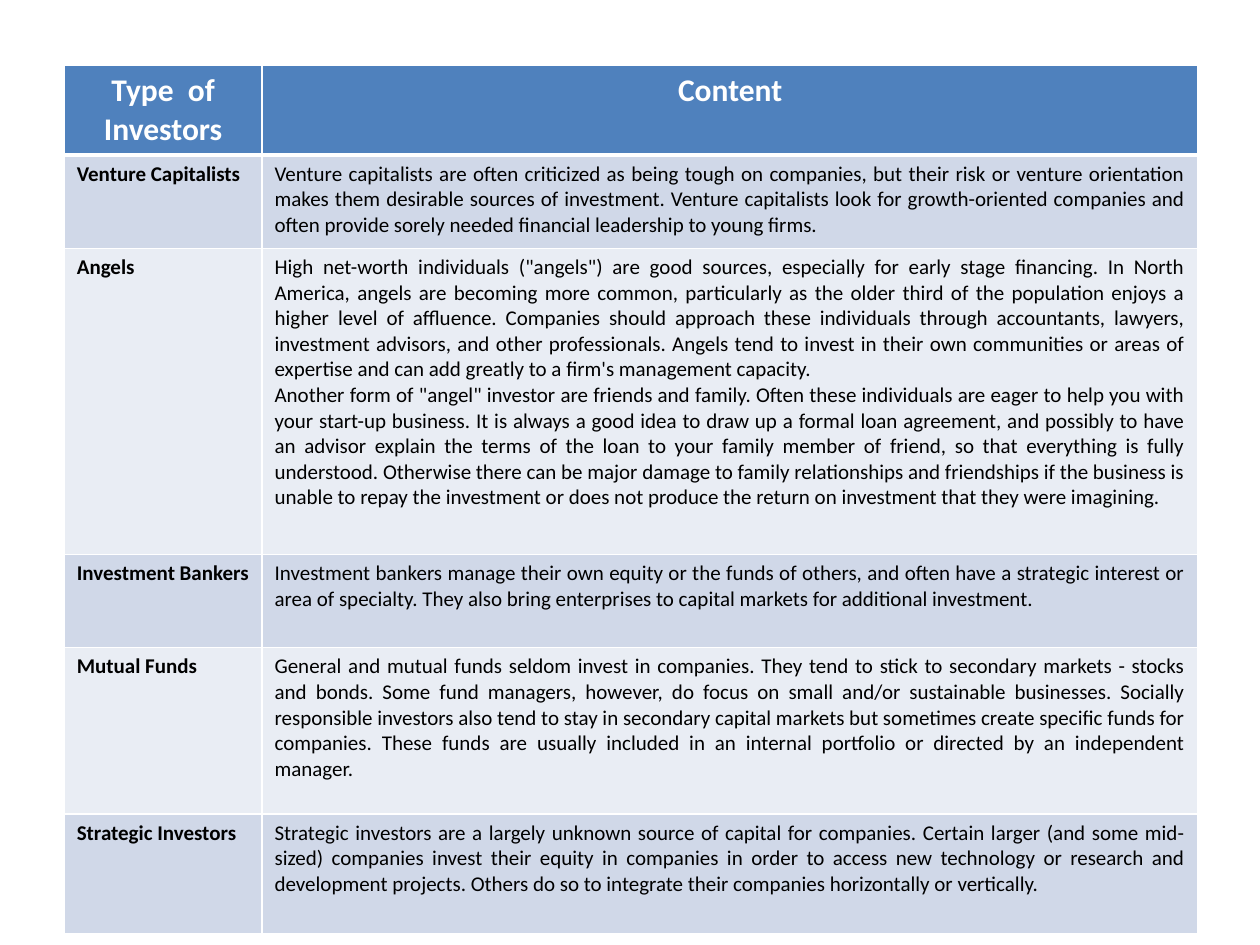
from lxml import etree
from pptx import Presentation
from pptx.dml.color import RGBColor
from pptx.enum import text
from pptx.oxml import ns
from pptx.util import Inches, Pt

WHITE = RGBColor(0xFF, 0xFF, 0xFF)
BLACK = RGBColor(0x00, 0x00, 0x00)
HEADER_BLUE = RGBColor(0x4F, 0x81, 0xBD)
BAND_DARK = RGBColor(0xD0, 0xD8, 0xE8)
BAND_LIGHT = RGBColor(0xE9, 0xED, 0xF4)

# Each row: height, investor type, paragraphs of content
ROWS = [
    (0.71, "Type  of Investors", ["Content"]),
    (0.74, "Venture Capitalists", [
        "Venture capitalists are often criticized as being tough on companies, but their risk "
        "or venture orientation makes them desirable sources of investment. Venture capitalists "
        "look for growth-oriented companies and often provide sorely needed financial "
        "leadership to young firms."]),
    (2.43, "Angels", [
        "High net-worth individuals (\"angels\") are good sources, especially for early stage "
        "financing. In North America, angels are becoming more common, particularly as the older "
        "third of the population enjoys a higher level of affluence. Companies should approach "
        "these individuals through accountants, lawyers, investment advisors, and other "
        "professionals. Angels tend to invest in their own communities or areas of expertise "
        "and can add greatly to a firm's management capacity.",
        "Another form of \"angel\" investor are friends and family. Often these individuals are "
        "eager to help you with your start-up business. It is always a good idea to draw up a "
        "formal loan agreement, and possibly to have an advisor explain the terms of the loan to "
        "your family member of friend, so that everything is fully understood. Otherwise there "
        "can be major damage to family relationships and friendships if the business is unable "
        "to repay the investment or does not produce the return on investment that they were "
        "imagining."]),
    (0.74, "Investment Bankers", [
        "Investment bankers manage their own equity or the funds of others, and often have a "
        "strategic interest or area of specialty. They also bring enterprises to capital markets "
        "for additional investment."]),
    (1.32, "Mutual Funds", [
        "General and mutual funds seldom invest in companies. They tend to stick to secondary "
        "markets - stocks and bonds. Some fund managers, however, do focus on small and/or "
        "sustainable businesses. Socially responsible investors also tend to stay in secondary "
        "capital markets but sometimes create specific funds for companies. These funds are "
        "usually included in an internal portfolio or directed by an independent manager."]),
    (0.95, "Strategic Investors", [
        "Strategic investors are a largely unknown source of capital for companies. Certain "
        "larger (and some mid-sized) companies invest their equity in companies in order to "
        "access new technology or research and development projects. Others do so to integrate "
        "their companies horizontally or vertically."]),
]
COLUMN_WIDTHS = [1.57, 7.43]


def set_borders(cell, widths):
    """Draw white borders, given widths in points by side (L, R, T, B)."""
    properties = cell._tc.get_or_add_tcPr()
    for index, (side, width) in enumerate(widths.items()):
        line = etree.Element(ns.qn(f"a:ln{side}"), w=str(Pt(width)))
        fill = etree.SubElement(line, ns.qn("a:solidFill"))
        etree.SubElement(fill, ns.qn("a:srgbClr"), val=str(WHITE))
        properties.insert(index, line)


presentation = Presentation()
presentation.slide_width = Inches(10)
presentation.slide_height = Inches(7.5)
slide = presentation.slides.add_slide(presentation.slide_layouts[6])

# Table grid
table_height = sum(height for height, _, _ in ROWS)
table = slide.shapes.add_table(
    len(ROWS), len(COLUMN_WIDTHS), Inches(0.51), Inches(0.52),
    Inches(sum(COLUMN_WIDTHS)), Inches(table_height)).table
for column, width in zip(table.columns, COLUMN_WIDTHS):
    column.width = Inches(width)

# Header and banded rows
for row_index, (height, investor, content) in enumerate(ROWS):
    table.rows[row_index].height = Inches(height)
    is_header = row_index == 0
    band = BAND_DARK if row_index % 2 else BAND_LIGHT

    for column_index, paragraphs in enumerate([[investor], content]):
        cell = table.cell(row_index, column_index)
        cell.fill.solid()
        cell.fill.fore_color.rgb = HEADER_BLUE if is_header else band
        set_borders(cell, {"L": 1, "R": 1, "T": 3 if row_index == 1 else 1,
                           "B": 3 if is_header else 1})

        cell.text_frame.text = "\n".join(paragraphs)
        for paragraph in cell.text_frame.paragraphs:
            if is_header:
                paragraph.alignment = text.PP_ALIGN.CENTER
            elif column_index == 1:
                paragraph.alignment = text.PP_ALIGN.JUSTIFY
            font = paragraph.font
            font.name = "Calibri"
            font.size = Pt(18 if is_header else 12)
            font.bold = is_header or column_index == 0
            font.color.rgb = WHITE if is_header else BLACK

presentation.save("out.pptx")
